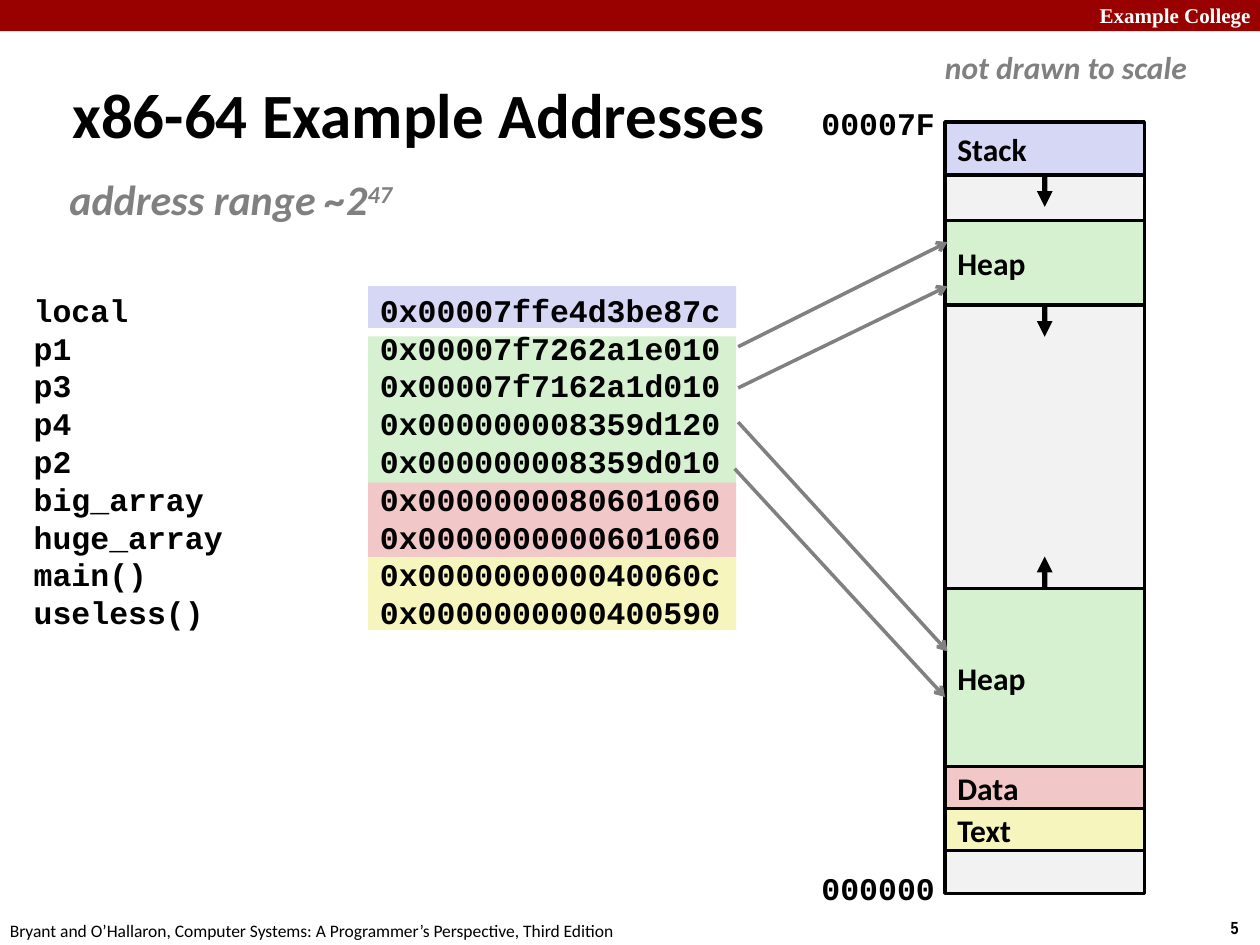
from dataclasses import dataclass

from lxml.etree import SubElement
from pptx import Presentation
from pptx.dml.color import RGBColor
from pptx.enum.shapes import MSO_CONNECTOR, MSO_SHAPE
from pptx.enum.text import MSO_ANCHOR, PP_ALIGN
from pptx.oxml.ns import qn
from pptx.util import Cm, Pt

BLACK, GRAY, WHITE, RED = "000000", "808080", "FFFFFF", "990000"
BLUE, GREEN, PINK, YELLOW, PALE = "D6D6F5", "D5F1CF", "F1C7C7", "F6F5BD", "F2F2F2"
SANS, MONO = "Calibri", "Courier New"


@dataclass
class Box:
    """A filled rectangle, lengths in cm."""
    left: float
    top: float
    width: float
    height: float
    fill: str
    text: str = ""
    edge: bool = False


@dataclass
class Label:
    """A text box, lengths in cm."""
    text: str
    left: float
    top: float
    width: float
    height: float
    size: float
    font: str = SANS
    color: str = BLACK
    bold: bool = True
    slant: bool = False
    inset: float = 0.25


def tint(code: str) -> RGBColor:
    return RGBColor.from_string(code)


def style(para, size: float, font: str, color: str = BLACK,
          bold: bool = True, slant: bool = False) -> None:
    para.alignment = PP_ALIGN.LEFT
    for run in para.runs:
        face = run.font
        face.size, face.name = Pt(size), font
        face.bold, face.italic = bold, slant
        face.color.rgb = tint(color)


def draw_box(slide, box: Box):
    shape = slide.shapes.add_shape(MSO_SHAPE.RECTANGLE, Cm(box.left), Cm(box.top),
                                   Cm(box.width), Cm(box.height))
    shape.shadow.inherit = False
    shape.fill.solid()
    shape.fill.fore_color.rgb = tint(box.fill)
    if box.edge:
        shape.line.color.rgb = tint(BLACK)
        shape.line.width = Pt(2)
    else:
        shape.line.fill.background()
    if box.text:
        frame = shape.text_frame
        frame.text = box.text
        frame.word_wrap = False
        frame.vertical_anchor = MSO_ANCHOR.MIDDLE
        style(frame.paragraphs[0], 18, SANS)
    return shape


def draw_label(slide, label: Label):
    shape = slide.shapes.add_textbox(Cm(label.left), Cm(label.top),
                                     Cm(label.width), Cm(label.height))
    frame = shape.text_frame
    frame.text = label.text
    frame.word_wrap = False
    frame.margin_left = frame.margin_right = Cm(label.inset)
    for para in frame.paragraphs:
        style(para, label.size, label.font, label.color, label.bold, label.slant)
    return shape


def draw_arrow(slide, x1: float, y1: float, x2: float, y2: float,
               color: str, width: float, head: str):
    line = slide.shapes.add_connector(MSO_CONNECTOR.STRAIGHT,
                                      Cm(x1), Cm(y1), Cm(x2), Cm(y2))
    line.line.color.rgb = tint(color)
    line.line.width = Pt(width)
    SubElement(line.line._ln, qn("a:tailEnd"), type=head)
    SubElement(line._element.spPr, qn("a:effectLst"))
    return line


def set_tabs(frame, stop: float) -> None:
    """Give every line the same pitch and one left tab stop."""
    frame.word_wrap = True
    for para in frame.paragraphs:
        para.line_spacing = Pt(21.6)
        tabs = SubElement(para._p.get_or_add_pPr(), qn("a:tabLst"))
        SubElement(tabs, qn("a:tab"), pos=str(int(Cm(stop))), algn="l")


BANDS = [  # top, height, fill behind the addresses
    (5.77, 0.84, BLUE), (6.78, 2.97, GREEN), (9.73, 1.5, PINK), (11.23, 1.47, YELLOW),
]
ROWS = [
    ("local", "0x00007ffe4d3be87c"),
    ("p1", "0x00007f7262a1e010"),
    ("p3", "0x00007f7162a1d010"),
    ("p4", "0x000000008359d120"),
    ("p2", "0x000000008359d010"),
    ("big_array", "0x0000000080601060"),
    ("huge_array", "0x0000000000601060"),
    ("main()", "0x000000000040060c"),
    ("useless()", "0x0000000000400590"),
]
PARTS = [  # top, height, fill, name of each memory region
    (2.49, 15.52, PALE, ""),
    (2.46, 1.07, BLUE, "Stack"),
    (4.45, 1.7, GREEN, "Heap"),
    (11.86, 3.6, GREEN, "Heap"),
    (15.45, 0.85, PINK, "Data"),
    (16.3, 0.85, YELLOW, "Text"),
]
GROWTH = [(1, 2, 0.64), (2, 2, 0.64), (3, 0, -0.64)]  # region, side, length
LINKS = [
    (14.88, 6.99, 19.1, 4.88),
    (14.88, 7.82, 19.1, 5.77),
    (14.88, 8.51, 19.1, 13.13),
    (14.81, 9.45, 19.05, 14.05),
]
LABELS = [
    Label("Example College", 21.92, -0.08, 3.63, 0.76, 12, "Times New Roman", WHITE),
    Label("5", 24.56, 18.36, 0.86, 0.69, 10, "Arial Narrow"),
    Label("Bryant and O’Hallaron, Computer Systems: A Programmer’s Perspective, "
          "Third Edition", -0.05, 18.42, 12.9, 0.69, 10, bold=False),
    Label("00007F", 16.31, 1.98, 2.82, 1.02, 18, MONO),
    Label("000000", 16.31, 17.4, 2.82, 1.02, 18, MONO),
    Label("not drawn to scale", 18.8, 0.84, 5.41, 1.02, 18, color=GRAY, slant=True),
]
TABLE = Label("\n".join(f"{name}\t{value}" for name, value in ROWS),
              0.43, 5.74, 15.67, 7.16, 18, MONO)
RANGE = Label("address range ~2", 1.27, 3.38, 6.88, 1.3, 24,
              color=GRAY, slant=True, inset=0.13)


def main() -> None:
    deck = Presentation()
    deck.slide_width, deck.slide_height = Cm(25.4), Cm(19.05)
    slide = deck.slides.add_slide(deck.slide_layouts[5])

    # Title
    title = slide.shapes.title
    title.left, title.top = Cm(1.2), Cm(1.48)
    title.width, title.height = Cm(18.26), Cm(1.6)
    title.text_frame.text = "x86-64 Example Addresses"
    title.text_frame.vertical_anchor = MSO_ANCHOR.MIDDLE
    style(title.text_frame.paragraphs[0], 36, SANS)

    # Top bar, address bands and the addresses on them
    draw_box(slide, Box(0, 0, 25.4, 0.63, RED))
    for top, height, fill in BANDS:
        draw_box(slide, Box(7.42, top, 7.42, height, fill))
    set_tabs(draw_label(slide, TABLE).text_frame, 6.98)

    # Labels and the range with its exponent
    for label in LABELS:
        draw_label(slide, label)
    para = draw_label(slide, RANGE).text_frame.paragraphs[0]
    power = para.add_run()
    power.text = "47"
    style(para, RANGE.size, SANS, GRAY, slant=True)
    power._r.get_or_add_rPr().set("baseline", "30000")

    # Memory column
    left, width = 19.05, 4.02
    parts = [draw_box(slide, Box(left, top, width, height, fill, name, True))
             for top, height, fill, name in PARTS]

    # Growth arrows
    mid = left + width / 2
    for index, side, length in GROWTH:
        top, height = PARTS[index][:2]
        start = top + height if side == 2 else top
        line = draw_arrow(slide, mid, start, mid, start + length, BLACK, 3, "triangle")
        line.begin_connect(parts[index], side)

    # Pointers into the heaps
    for link in LINKS:
        draw_arrow(slide, *link, GRAY, 2, "arrow")

    deck.save("out.pptx")


if __name__ == "__main__":
    main()
